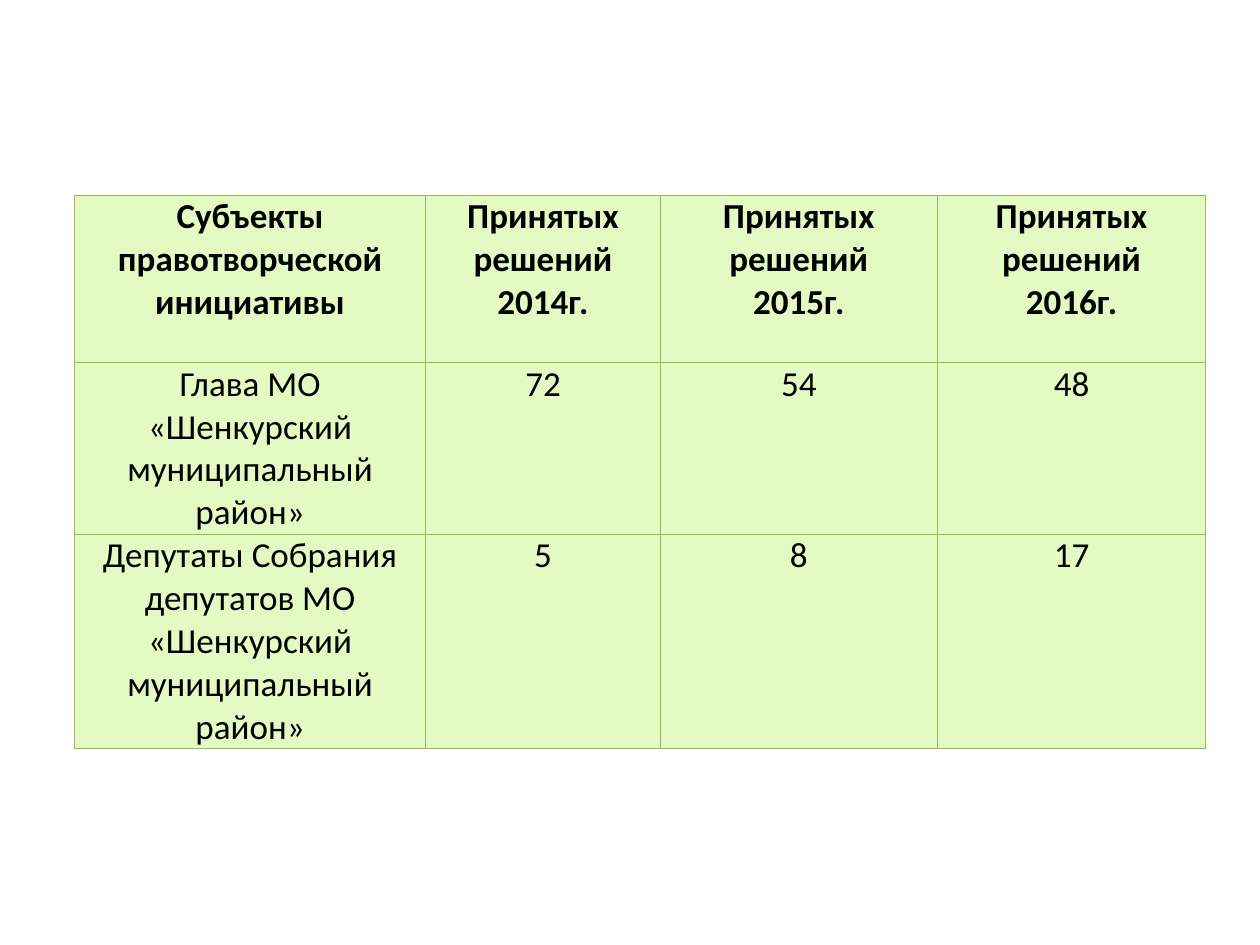
from dataclasses import dataclass

from lxml import etree
from pptx import Presentation
from pptx import util as u
from pptx.dml.color import RGBColor
from pptx.enum import text
from pptx.oxml import ns

COLORS = {"fill": "E3FBC2", "border": "98B955", "text": "000000"}
FONT = "Calibri"
COL_WIDTHS = [2.79, 1.86, 2.2, 2.13]
YEARS = [2014, 2015, 2016]


@dataclass
class Row:
    height: float
    cells: list[str]
    bold: bool = False


ROWS = [
    Row(1.33, ["Субъекты правотворческой инициативы"]
        + [f"Принятых решений\n{year}г." for year in YEARS], bold=True),
    Row(1.36, ["Глава МО «Шенкурский муниципальный район»", "72", "54", "48"]),
    Row(1.7, ["Депутаты Собрания депутатов МО «Шенкурский муниципальный район»",
              "5", "8", "17"]),
]


def write_text(tf, content: str, *, size: float = 20, bold: bool = False,
               color: str = "text", align=text.PP_ALIGN.CENTER) -> None:
    """Write each line of the content as a formatted paragraph."""
    for i, line in enumerate(content.split("\n")):
        p = tf.paragraphs[0] if i == 0 else tf.add_paragraph()
        p.alignment = align
        r = p.add_run()
        r.text = line
        r.font.name = FONT
        r.font.size = u.Pt(size)
        r.font.bold = bold
        r.font.color.rgb = RGBColor.from_string(COLORS[color])


def set_borders(cell, color: str, width: float) -> None:
    """Border lines come before the fill in the cell properties."""
    props = cell._tc.get_or_add_tcPr()
    for i, side in enumerate(("lnL", "lnR", "lnT", "lnB")):
        ln = etree.Element(ns.qn(f"a:{side}"), w=str(u.Pt(width)))
        fill = etree.SubElement(ln, ns.qn("a:solidFill"))
        etree.SubElement(fill, ns.qn("a:srgbClr"), val=COLORS[color])
        props.insert(i, ln)


def draw_cell(cell, content: str, bold: bool) -> None:
    cell.margin_left = cell.margin_right = u.Inches(0.07)
    cell.margin_top = cell.margin_bottom = 0
    cell.fill.solid()
    cell.fill.fore_color.rgb = RGBColor.from_string(COLORS["fill"])
    set_borders(cell, "border", 0.75)
    write_text(cell.text_frame, content, bold=bold)


def draw_table(s, left: float, top: float, rows: list[Row]) -> None:
    height = sum(row.height for row in rows)
    table = s.shapes.add_table(
        len(rows), len(COL_WIDTHS), u.Inches(left), u.Inches(top),
        u.Inches(sum(COL_WIDTHS)), u.Inches(height)).table
    for column, width in zip(table.columns, COL_WIDTHS):
        column.width = u.Inches(width)
    for table_row, row in zip(table.rows, rows):
        table_row.height = u.Inches(row.height)
        for cell, content in zip(table_row.cells, row.cells):
            draw_cell(cell, content, row.bold)


def main() -> None:
    prs = Presentation()
    prs.slide_width, prs.slide_height = u.Inches(10), u.Inches(7.5)
    s = prs.slides.add_slide(prs.slide_layouts[6])

    # Decisions adopted by year and by initiator
    draw_table(s, 0.59, 1.55, ROWS)

    prs.save("out.pptx")


if __name__ == "__main__":
    main()
